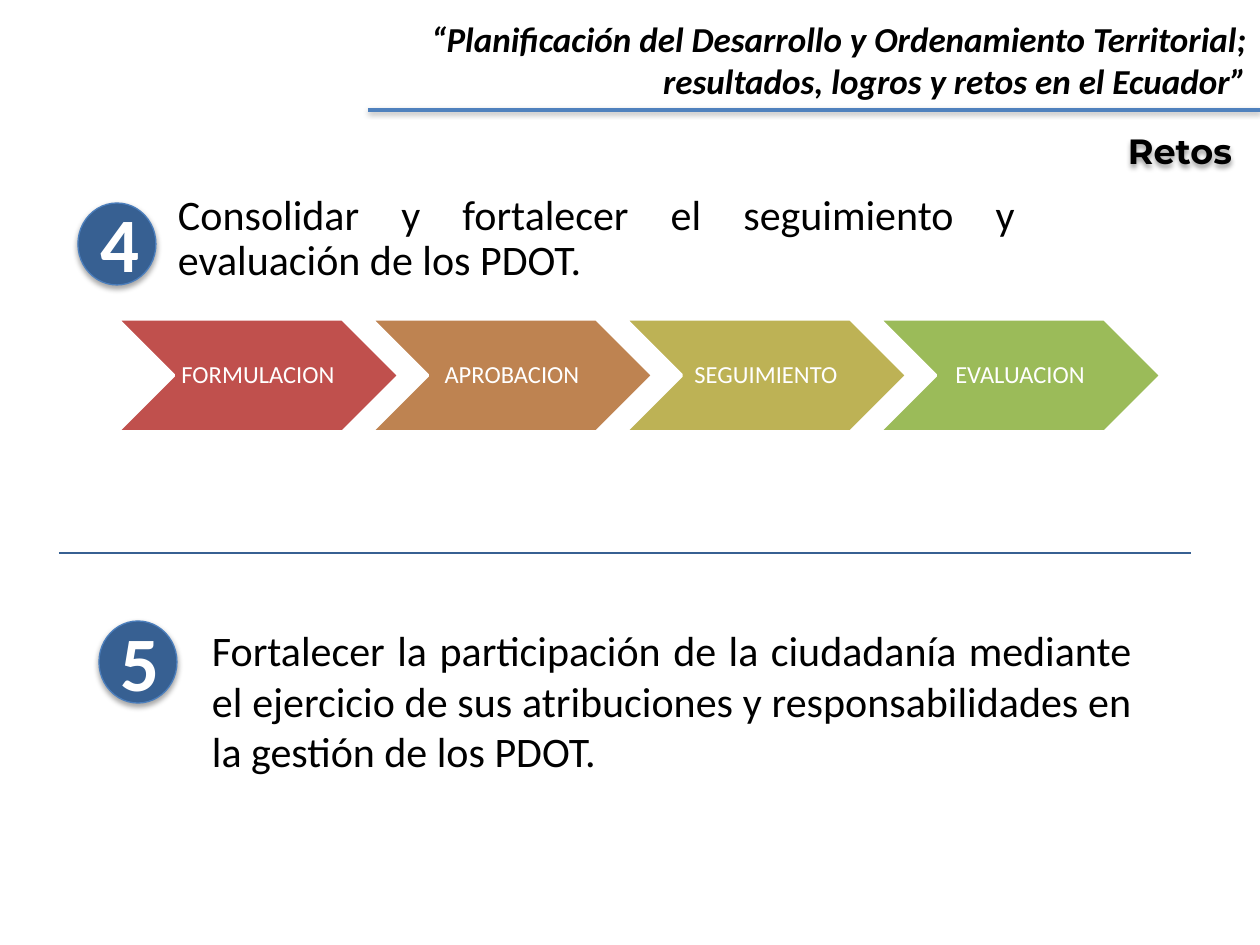
from lxml import etree
from pptx import Presentation
from pptx.dml.color import RGBColor
from pptx.enum.shapes import MSO_CONNECTOR, MSO_SHAPE
from pptx.enum.text import MSO_ANCHOR, MSO_AUTO_SIZE, PP_ALIGN
from pptx.oxml.ns import qn
from pptx.util import Emu, Pt

CHEVRON, OVAL = MSO_SHAPE.CHEVRON, MSO_SHAPE.OVAL
STRAIGHT = MSO_CONNECTOR.STRAIGHT
TOP, MIDDLE = MSO_ANCHOR.TOP, MSO_ANCHOR.MIDDLE
LEFT, CENTER = PP_ALIGN.LEFT, PP_ALIGN.CENTER
RIGHT, JUSTIFY = PP_ALIGN.RIGHT, PP_ALIGN.JUSTIFY

BLACK = RGBColor(0x00, 0x00, 0x00)
WHITE = RGBColor(0xFF, 0xFF, 0xFF)
BLUE = RGBColor(0x4F, 0x81, 0xBD)
NAVY = RGBColor(0x37, 0x60, 0x92)
RIM = RGBColor(0x4B, 0x7E, 0xBC)
RED = RGBColor(0xC0, 0x50, 0x4D)
BROWN = RGBColor(0xBE, 0x83, 0x51)
OLIVE = RGBColor(0xBD, 0xB2, 0x55)
GREEN = RGBColor(0x9B, 0xBB, 0x59)

INSETS = (13, 6, 13, 6)
BODY = {"name": "Calibri", "size": Pt(24)}
BANNER = {"name": "Calibri", "size": Pt(20), "bold": True, "italic": True}
HEAD = {"name": "Montserrat", "size": Pt(20), "bold": True}
DIGIT = {"name": "Calibri", "size": Pt(44), "bold": True}
STEP = {"name": "Calibri", "size": Pt(14)}
STEPS = [("FORMULACION", RED), ("APROBACION", BROWN),
         ("SEGUIMIENTO", OLIVE), ("EVALUACION", GREEN)]


def px(n):
    return Emu(round(n * 914400 / 126))


def effect(shape, alpha=0, dist=0):
    """Give a soft shadow below the shape, or none when alpha is 0."""
    props = shape._element.spPr
    group = etree.SubElement(props, qn("a:effectLst"))
    if alpha:
        cast = etree.SubElement(group, qn("a:outerShdw"), blurRad="40000",
                                dist=str(dist), dir="5400000", rotWithShape="0")
        tone = etree.SubElement(cast, qn("a:srgbClr"), val="000000")
        etree.SubElement(tone, qn("a:alpha"), val=str(alpha * 1000))


def write(shape, lines, font, color=BLACK, align=LEFT, anchor=TOP,
          insets=INSETS, space=None):
    frame = shape.text_frame
    values = {"word_wrap": True, "auto_size": MSO_AUTO_SIZE.NONE,
              "vertical_anchor": anchor}
    sides = ("margin_left", "margin_top", "margin_right", "margin_bottom")
    values.update(zip(sides, map(px, insets)))
    for key, value in values.items():
        setattr(frame, key, value)
    frame.text = "\n".join(lines)
    for para in frame.paragraphs:
        para.alignment = align
        if space:
            para.line_spacing = space
        for run in para.runs:
            for key, value in font.items():
                setattr(run.font, key, value)
            run.font.color.rgb = color


def text(slide, box, *args, **style):
    write(slide.shapes.add_textbox(*map(px, box)), *args, **style)


def solid(slide, kind, box, fill, edge, width):
    shape = slide.shapes.add_shape(kind, *map(px, box))
    shape.fill.solid()
    shape.fill.fore_color.rgb = fill
    shape.line.color.rgb = edge
    shape.line.width = Pt(width)
    return shape


def rule(slide, left, right, y, color, width):
    line = slide.shapes.add_connector(STRAIGHT, px(left), px(y), px(right), px(y))
    line.line.color.rgb = color
    line.line.width = Pt(width)
    return line


def header(slide, x, y, w, h):
    text(slide, (x, y, w, h),
         ["“Planificación del Desarrollo y Ordenamiento Territorial;",
          "resultados, logros y retos en el Ecuador”"], BANNER, align=RIGHT)
    effect(rule(slide, x + 156, x + w, y + 99, BLUE, 2), 38, 20000)


def title(slide, x, y, w, h):
    head = slide.shapes.title
    head.left, head.top, head.width, head.height = map(px, (x, y, w, h))
    head.fill.background()
    write(head, ["Retos"], HEAD, align=CENTER, anchor=MIDDLE,
          insets=(13, 6, 23, 6))
    effect(head, 38, 20000)


def badge(slide, x, y, w, h, digit):
    disc = solid(slide, OVAL, (x, y, w, h), NAVY, RIM, 0.75)
    effect(disc, 35, 23000)
    text(slide, (x + 9, y - 13, 59, 106), [digit], DIGIT, color=WHITE)


def process(slide, x, y, w, h):
    wide = 282
    pitch = (w - wide) / (len(STEPS) - 1)
    for i, (label, fill) in enumerate(STEPS):
        left = x + i * pitch
        effect(solid(slide, CHEVRON, (left, y, wide, h), fill, WHITE, 2))
        text(slide, (left + h / 2, y, wide - h, h), [label], STEP, color=WHITE,
             align=CENTER, anchor=MIDDLE, insets=(3, 3, 3, 3), space=0.9)


def main():
    deck = Presentation()
    deck.slide_width, deck.slide_height = px(1260), px(945)
    slide = deck.slides.add_slide(deck.slide_layouts[5])
    process(slide, 117, 319, 1044, 113)
    title(slide, 1047, 112, 276, 77)
    header(slide, 212, 11, 1048, 97)
    text(slide, (165, 188, 863, 105),
         ["Consolidar y fortalecer el seguimiento y evaluación de los PDOT."],
         BODY, align=JUSTIFY, space=0.9)
    effect(rule(slide, 59, 1191, 553, NAVY, 1.5))
    text(slide, (199, 619, 946, 165),
         ["Fortalecer la participación de la ciudadanía mediante el ejercicio "
          "de sus atribuciones y responsabilidades en la gestión de los PDOT."],
         BODY, align=JUSTIFY)
    badge(slide, 78, 203, 78, 82, "4")
    badge(slide, 99, 621, 78, 82, "5")
    deck.save("out.pptx")


if __name__ == "__main__":
    main()
